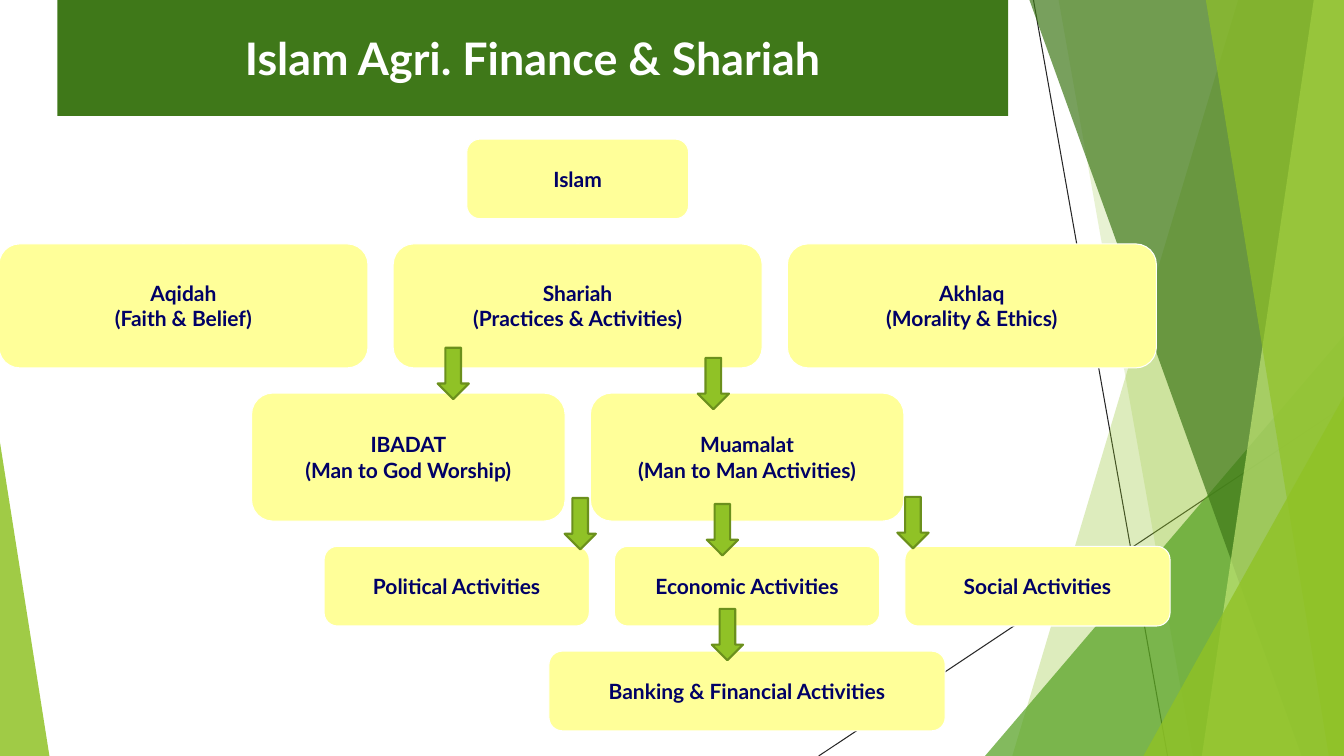
import dataclasses

import lxml.etree
import pptx
import pptx.dml.color
import pptx.enum.shapes
import pptx.enum.text
import pptx.oxml.ns
import pptx.util

Inches = pptx.util.Inches
Pt = pptx.util.Pt
Shape = pptx.enum.shapes.MSO_SHAPE
Connector = pptx.enum.shapes.MSO_CONNECTOR
qn = pptx.oxml.ns.qn


@dataclasses.dataclass(frozen=True)
class Theme:
    font: str = "Lato"
    title_size: int = 32
    node_size: int = 15
    white: str = "FFFFFF"
    navy: str = "000066"
    cream: str = "FFFF99"
    lime: str = "90C226"
    pale_lime: str = "C0E474"
    leaf: str = "54A021"
    forest: str = "3F7819"
    arrow_edge: str = "6B901C"
    hairline: str = "262626"


@dataclasses.dataclass
class Node:
    label: str
    width: float
    height: float
    children: tuple = ()


THEME = Theme()
WIDTH, HEIGHT = 13.33, 7.5
GAP = 0.25

ECONOMIC = Node("Economic Activities", 2.63, 0.79, (
    Node("Banking & Financial Activities", 3.93, 0.79),))
MUAMALAT = Node("Muamalat\n(Man to Man Activities)", 3.11, 1.27, (
    Node("Political Activities", 2.63, 0.79),
    ECONOMIC,
    Node("Social Activities", 2.63, 0.79)))
SHARIAH = Node("Shariah\n(Practices & Activities)", 3.66, 1.23, (
    Node("IBADAT\n(Man to God Worship)", 3.11, 1.27),
    MUAMALAT))
ISLAM = Node("Islam", 2.2, 0.79, (
    Node("Aqidah\n(Faith & Belief)", 3.66, 1.23),
    SHARIAH,
    Node("Akhlaq\n(Morality & Ethics)", 3.66, 1.23)))

ARROW_CORNERS = [(4.34, 3.45), (6.92, 3.55), (5.6, 4.94), (7.01, 5), (8.9, 4.93), (7.06, 6.04)]


def rgb(color):
    return pptx.dml.color.RGBColor.from_string(color)


def paint(shape, color, opacity=100, edge=None, edge_width=0.75):
    shape.shadow.inherit = False
    shape.fill.solid()
    shape.fill.fore_color.rgb = rgb(color)
    if opacity < 100:
        swatch = shape.fill._xPr.find(qn("a:solidFill"))[0]
        lxml.etree.SubElement(swatch, qn("a:alpha"), val=str(opacity * 1000))
    if edge:
        shape.line.color.rgb = rgb(edge)
        shape.line.width = Pt(edge_width)
    else:
        shape.line.fill.background()


def write(shape, text, size, color):
    frame = shape.text_frame
    frame.text = text
    frame.vertical_anchor = pptx.enum.text.MSO_ANCHOR.MIDDLE
    for para in frame.paragraphs:
        para.alignment = pptx.enum.text.PP_ALIGN.CENTER
        for span in para.runs:
            span.font.name = THEME.font
            span.font.size = Pt(size)
            span.font.bold = True
            span.font.color.rgb = rgb(color)


def add_line(slide, kind, start, end, color, width):
    line = slide.shapes.add_connector(kind, *(Inches(value) for value in start + end))
    line.line.color.rgb = rgb(color)
    line.line.width = Pt(width)
    lxml.etree.SubElement(line._element.spPr, qn("a:effectLst"))
    return line


def add_backdrop(slide, width, height):
    """Translucent green facets along the slide's edges."""
    for start, end in [((10.25, 0), (11.58, height)), ((width, 4.03), (8.12, height))]:
        add_line(slide, Connector.STRAIGHT, start, end, THEME.hairline, 0.75)

    def add_band(top_left, bottom_left, color, opacity):
        outline = slide.shapes.build_freeform(Inches(top_left), 0, scale=1.0)
        corners = [(width, 0), (width, height), (bottom_left, height)]
        outline.add_line_segments([(Inches(x), Inches(y)) for x, y in corners], close=True)
        paint(outline.convert_to_shape(), color, opacity)

    def add_wedge(left, top, wedge_width, apex, color, opacity):
        wedge = slide.shapes.add_shape(
            Shape.ISOSCELES_TRIANGLE, Inches(left), Inches(top),
            Inches(wedge_width), Inches(height - top))
        wedge.adjustments[0] = apex
        paint(wedge, color, opacity)

    add_band(12.28, 10.04, THEME.lime, 30)
    add_band(10.5, 11.83, THEME.lime, 20)
    add_wedge(9.77, 3.33, width - 9.77, 1, THEME.leaf, 72)
    add_band(10.21, 12.91, THEME.forest, 70)
    add_band(13.03, 11.92, THEME.pale_lime, 70)
    add_band(11.96, 13.18, THEME.lime, 65)
    add_wedge(11.34, 3.93, width - 11.34, 1, THEME.lime, 80)
    add_wedge(0, 4.39, 0.49, 0, THEME.lime, 85)


def add_title(slide, left, top, width, height):
    title = slide.shapes.title
    title.left, title.top = Inches(left), Inches(top)
    title.width, title.height = Inches(width), Inches(height)
    paint(title, THEME.forest)
    write(title, "Islam Agri. Finance & Shariah", THEME.title_size, THEME.white)


def join(slide, child, parent, start, end):
    """Link a child's top to its parent's bottom, bending in the gap between."""
    offset = round(end[0] - start[0], 2)
    kind = Connector.ELBOW if offset else Connector.STRAIGHT
    link = add_line(slide, kind, start, end, THEME.white, 2.25)
    link.begin_connect(child, 0)
    link.end_connect(parent, 2)
    if offset:
        # A quarter turn makes the elbow run vertical, horizontal, vertical
        rise, span = start[1] - end[1], abs(offset)
        link.left = Inches((start[0] + end[0] - rise) / 2)
        link.top = Inches((start[1] + end[1] - span) / 2)
        link.width, link.height = Inches(rise), Inches(span)
        transform = link._element.spPr.find(qn("a:xfrm"))
        transform.set("rot", str((270 if offset > 0 else 90) * 60000))
        transform.set("flipH", "0" if offset > 0 else "1")
        transform.set("flipV", "0")


def add_tree(slide, node, center, top):
    """Draw a node with its children centred in a row below it."""
    box = slide.shapes.add_shape(
        Shape.ROUNDED_RECTANGLE, Inches(center - node.width / 2), Inches(top),
        Inches(node.width), Inches(node.height))
    paint(box, THEME.cream, edge=THEME.white)
    write(box, node.label, THEME.node_size, THEME.navy)
    frame = box.text_frame
    frame.word_wrap = False
    frame.margin_left = frame.margin_right = Inches(0.06)
    frame.margin_top = frame.margin_bottom = Inches(0.03)

    bottom = top + node.height
    row_width = sum(child.width + GAP for child in node.children) - GAP
    left = center - row_width / 2
    for child in node.children:
        child_center = left + child.width / 2
        child_box = add_tree(slide, child, child_center, bottom + GAP)
        join(slide, child_box, box, (child_center, bottom + GAP), (center, bottom))
        left += child.width + GAP
    return box


def add_arrows(slide, corners, width, height):
    for left, top in corners:
        arrow = slide.shapes.add_shape(
            Shape.DOWN_ARROW, Inches(left), Inches(top), Inches(width), Inches(height))
        paint(arrow, THEME.lime, edge=THEME.arrow_edge, edge_width=1.5)


def main():
    deck = pptx.Presentation()
    deck.slide_width, deck.slide_height = Inches(WIDTH), Inches(HEIGHT)
    slide = deck.slides.add_slide(deck.slide_layouts.get_by_name("Title Only"))
    add_backdrop(slide, WIDTH, HEIGHT)
    add_title(slide, 0.57, 0, 9.43, 1.15)
    add_tree(slide, ISLAM, 5.73, 1.38)
    add_arrows(slide, ARROW_CORNERS, 0.31, 0.51)
    deck.save("out.pptx")


if __name__ == "__main__":
    main()
